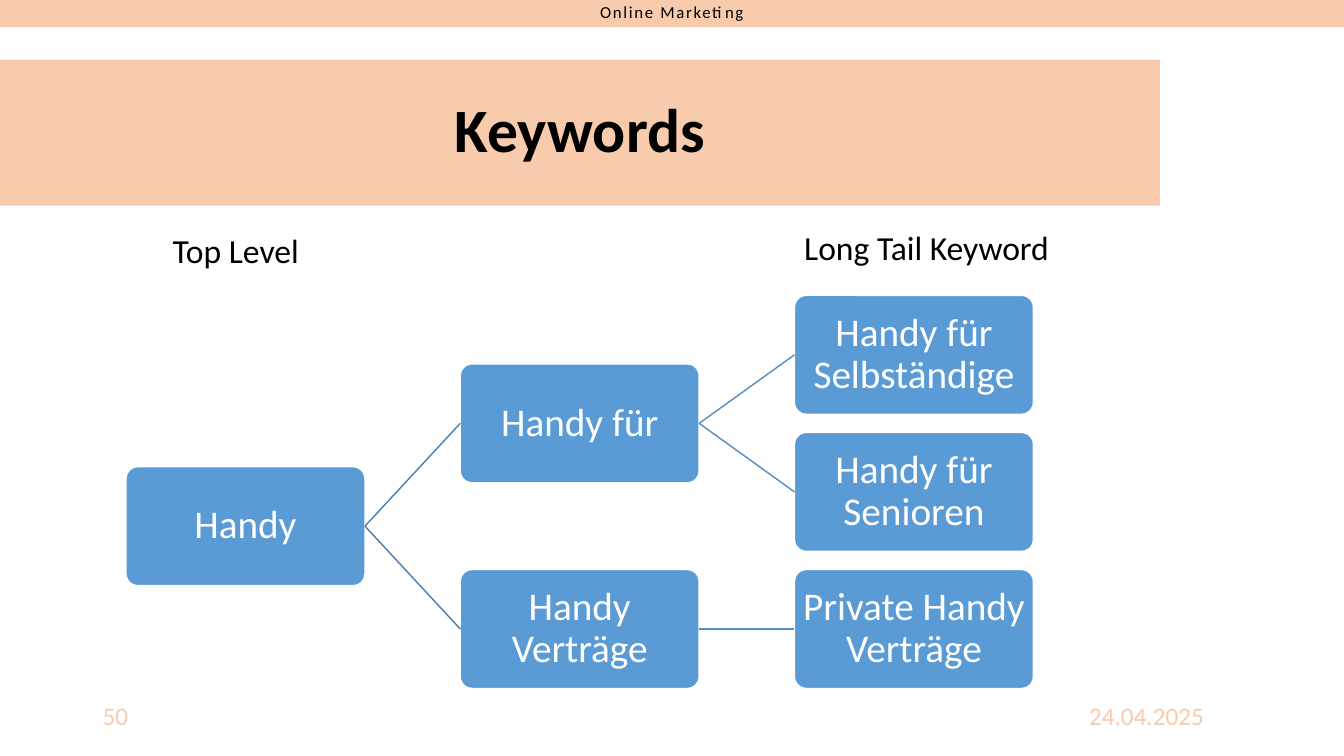
import pptx
import pptx.util
import pptx.dml.color
import pptx.enum.shapes
import pptx.enum.text
from lxml import etree

SLIDE_W, SLIDE_H = 13.33, 7.5
FONT = "Calibri"
COLORS = {
    "band": "F8CBAD",
    "node": "5B9BD5",
    "white": "FFFFFF",
    "black": "000000",
    "first_link": "497CAB",
    "second_link": "538DC1",
}

# Tree grid: top left corner, pitch of columns and rows, size of a node
TREE_LEFT, TREE_TOP = 1.25, 2.93
COLUMN_PITCH, ROW_PITCH = 3.315, 1.36
NODE_W, NODE_H = 2.37, 1.18

# Each keyword holds its more specific keywords
KEYWORDS = ("Handy", [
    ("Handy für", [("Handy für Selbständige", []), ("Handy für Senioren", [])]),
    ("Handy Verträge", [("Private Handy Verträge", [])]),
])

Inches = pptx.util.Inches
Pt = pptx.util.Pt
ALIGN = pptx.enum.text.PP_ALIGN
ANCHOR = pptx.enum.text.MSO_ANCHOR
SHAPE = pptx.enum.shapes.MSO_SHAPE


def rgb(name):
    return pptx.dml.color.RGBColor.from_string(COLORS[name])


def write(shape, text, size, color, align=ALIGN.LEFT, anchor=ANCHOR.TOP,
          spacing=None, bold=False, inset=None, wrap=True):
    frame = shape.text_frame
    frame.text = text
    frame.word_wrap = wrap
    frame.vertical_anchor = anchor
    if inset is not None:
        frame.margin_left = frame.margin_right = Inches(inset)
        frame.margin_top = frame.margin_bottom = Inches(inset)
    paragraph = frame.paragraphs[0]
    paragraph.alignment = align
    paragraph.line_spacing = spacing
    run = paragraph.runs[0]
    run.font.name, run.font.size, run.font.bold = FONT, Pt(size), bold
    run.font.color.rgb = rgb(color)
    return run


def add_block(slide, kind, left, top, width, height, fill):
    block = slide.shapes.add_shape(
        kind, Inches(left), Inches(top), Inches(width), Inches(height))
    block.shadow.inherit = False
    block.fill.solid()
    block.fill.fore_color.rgb = rgb(fill)
    block.line.fill.background()
    return block


def add_band(slide, top, width, height, text, size, anchor, bold=False):
    """Band from the left edge, given as shares of the slide."""
    band = add_block(slide, SHAPE.RECTANGLE, 0, top * SLIDE_H,
                     width * SLIDE_W, height * SLIDE_H, "band")
    return write(band, text, size, "black", ALIGN.CENTER, anchor, 0.9, bold)


def add_label(slide, left, top, width, height, text, size, color, wrap=True):
    """Text placed by shares of the slide."""
    label = slide.shapes.add_textbox(
        Inches(left * SLIDE_W), Inches(top * SLIDE_H),
        Inches(width * SLIDE_W), Inches(height * SLIDE_H))
    write(label, text, size, color, wrap=wrap)


def add_node(slide, column, row, text):
    node = add_block(slide, SHAPE.ROUNDED_RECTANGLE,
                     TREE_LEFT + column * COLUMN_PITCH,
                     TREE_TOP + row * ROW_PITCH, NODE_W, NODE_H, "node")
    node.adjustments[0] = 0.1
    node.line.color.rgb = rgb("white")
    node.line.width = Pt(1)
    write(node, text, 28, "white", ALIGN.CENTER, ANCHOR.MIDDLE, 0.9, inset=0.02)


def add_link(slide, column, from_row, to_row):
    start_x = TREE_LEFT + column * COLUMN_PITCH + NODE_W
    end_x = TREE_LEFT + (column + 1) * COLUMN_PITCH
    start_y, end_y = (TREE_TOP + row * ROW_PITCH + NODE_H / 2
                      for row in (from_row, to_row))
    link = slide.shapes.add_connector(
        pptx.enum.shapes.MSO_CONNECTOR.STRAIGHT, Inches(start_x),
        Inches(start_y), Inches(end_x), Inches(end_y))
    link.line.color.rgb = rgb("second_link" if column else "first_link")
    link.line.width = Pt(1)
    etree.SubElement(link.element.spPr, pptx.oxml.ns.qn("a:effectLst"))


def add_tree(slide, keyword, column=0, next_row=0):
    """Draw a keyword midway beside its children; return its row and the next free one."""
    text, children = keyword
    child_rows = []
    row = next_row
    for child in children:
        child_row, next_row = add_tree(slide, child, column + 1, next_row)
        child_rows.append(child_row)
    if child_rows:
        row = sum(child_rows) / len(child_rows)
    else:
        next_row += 1
    add_node(slide, column, row, text)
    for child_row in child_rows:
        add_link(slide, column, row, child_row)
    return row, next_row


def main():
    deck = pptx.Presentation()
    deck.slide_width, deck.slide_height = Inches(SLIDE_W), Inches(SLIDE_H)
    slide = deck.slides.add_slide(deck.slide_layouts[6])

    # Footer: date and page number
    add_label(slide, 0.803, 0.92, 0.128, 0.059, "24.04.2025", 18, "band")
    add_label(slide, 0.069, 0.92, 0.056, 0.047, "50", 18, "band")

    # Course strip and title
    course = add_band(slide, -0.001, 1, 0.037, "Online Marketing", 12, ANCHOR.BOTTOM)
    course.font._element.set("spc", "120")
    add_band(slide, 0.079, 0.863, 0.193, "Keywords", 44, ANCHOR.MIDDLE, bold=True)

    # Keyword tree with its column headings
    add_tree(slide, KEYWORDS)
    add_label(slide, 0.121, 0.297, 0.11, 0.067, "Top Level", 24, "black", wrap=False)
    add_label(slide, 0.591, 0.293, 0.212, 0.067, "Long Tail Keyword", 24, "black")

    deck.save("out.pptx")


if __name__ == "__main__":
    main()
